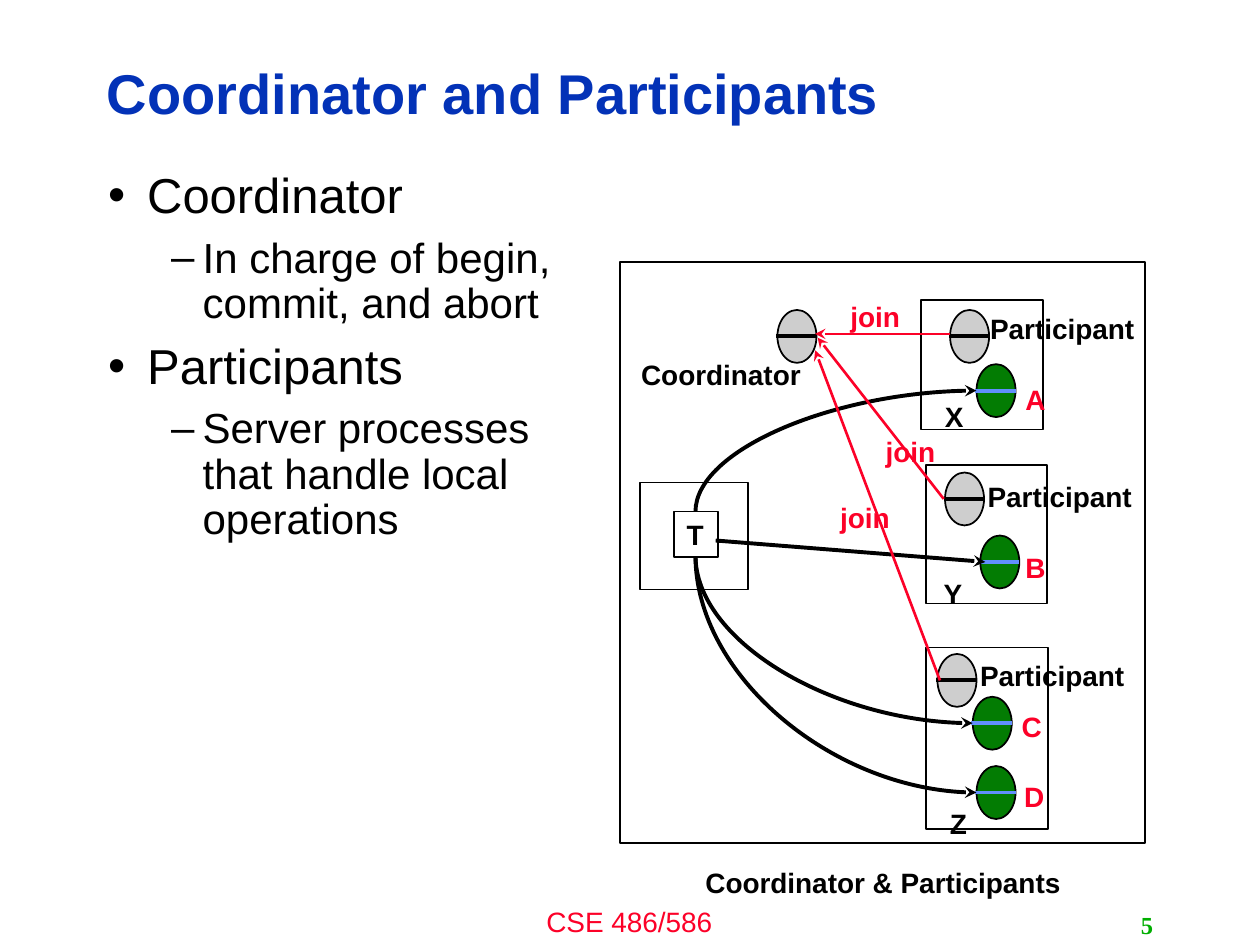
import pptx
import pptx.util
import pptx.dml.color
import pptx.enum.shapes
import pptx.enum.text
import pptx.oxml.ns
from lxml import etree

Inches = pptx.util.Inches
Pt = pptx.util.Pt
SHAPE = pptx.enum.shapes.MSO_SHAPE
CONNECTOR = pptx.enum.shapes.MSO_CONNECTOR
ALIGN = pptx.enum.text.PP_ALIGN
ANCHOR = pptx.enum.text.MSO_ANCHOR
qn = pptx.oxml.ns.qn

COLORS = {"black": "000000", "white": "FFFFFF", "title": "0332B7", "red": "FC0128",
          "number": "00AE00", "object": "037C03", "band": "618FFD", "process": "CECECE"}
NODE_WIDTH, NODE_HEIGHT = 0.31, 0.42

BULLETS = [(0, "Coordinator"), (1, "In charge of begin, commit, and abort"),
           (0, "Participants"), (1, "Server processes that handle local operations")]
LEVELS = [{"mark": "•", "size": 28, "margin": 0.31, "hang": 0.31},
          {"mark": "–", "size": 24, "margin": 0.75, "hang": 0.25}]

SITES = [
    {"box": (2.39, 0.30, 0.97, 1.03), "name": ("X", 0.09, 0.74), "process": (0.23, 0.08),
     "label": (0.45, 0.04), "objects": [("A", (0.44, 0.51), (0.73, 0.61))]},
    {"box": (2.43, 1.61, 0.96, 1.10), "name": ("Y", 0.04, 0.84), "process": (0.15, 0.06),
     "label": (0.39, 0.07), "objects": [("B", (0.43, 0.56), (0.69, 0.63))]},
    {"box": (2.43, 3.06, 0.97, 1.44), "name": ("Z", 0.09, 1.21), "process": (0.09, 0.05),
     "label": (0.33, 0.04), "objects": [("C", (0.37, 0.39), (0.66, 0.44)),
                                        ("D", (0.40, 0.94), (0.68, 1.00))]},
]
CURVES = [((0.60, 1.98), (2.83, 1.02)), ((0.60, 2.33), (2.80, 3.66)),
          ((0.60, 2.33), (2.83, 4.21))]
JOINS = [((2.62, 0.57), (1.55, 0.57), (1.73, 0.25)),
         ((2.57, 1.88), (1.57, 0.60), (2.01, 1.32)),
         ((2.54, 3.32), (1.55, 0.70), (1.65, 1.84))]


def rgb(name):
    """Return the named colour."""
    return pptx.dml.color.RGBColor.from_string(COLORS[name])


def within(box, left, top, *size):
    """Shift a place, with or without a size, by the origin of a box."""
    return (box[0] + left, box[1] + top, *size)


def format_para(para, text, size=16, color="black", bold=True, font="Arial",
                align=ALIGN.LEFT, spacing=None):
    """Write one formatted run into a paragraph."""
    para.alignment = align
    para.line_spacing = spacing
    span = para.add_run()
    span.text = text
    span.font.size = Pt(size)
    span.font.bold = bold
    span.font.name = font
    span.font.color.rgb = rgb(color)


def add_text(slide, box, text, anchor=ANCHOR.TOP, wrap=True, **style):
    """Add a text box holding one paragraph."""
    frame = slide.shapes.add_textbox(*map(Inches, box)).text_frame
    frame.word_wrap = wrap
    frame.vertical_anchor = anchor
    format_para(frame.paragraphs[0], text, **style)


def add_outline(slide, kind, box, fill=None):
    """Add a shape with a thin black outline."""
    shape = slide.shapes.add_shape(kind, *map(Inches, box))
    shape.shadow.inherit = False
    if fill:
        shape.fill.solid()
        shape.fill.fore_color.rgb = rgb(fill)
    else:
        shape.fill.background()
    shape.line.color.rgb = rgb("black")
    shape.line.width = Pt(1)
    return shape


def add_line(slide, start, end, color="black", width=2.25, arrow=False,
             kind=CONNECTOR.STRAIGHT):
    """Add a connector, with an arrowhead at its end if asked."""
    line = slide.shapes.add_connector(kind, *map(Inches, (*start, *end)))
    line.line.color.rgb = rgb(color)
    line.line.width = Pt(width)
    properties = line._element.spPr
    if arrow:
        etree.SubElement(properties.find(qn("a:ln")), qn("a:tailEnd"), type="stealth")
    etree.SubElement(properties, qn("a:effectLst"))
    return line


def add_curve(slide, start, end):
    """Add a quarter curve that leaves upright and arrives level."""
    middle_x, middle_y = (start[0] + end[0]) / 2, (start[1] + end[1]) / 2
    half_rise, half_run = (start[1] - end[1]) / 2, (end[0] - start[0]) / 2
    line = add_line(slide, (middle_x - half_rise, middle_y - half_run),
                    (middle_x + half_rise, middle_y + half_run),
                    arrow=True, kind=CONNECTOR.CURVE)
    properties = line._element.spPr
    properties.find(qn("a:xfrm")).set("rot", str(270 * 60000))
    properties.find(qn("a:prstGeom")).set("prst", "curvedConnector2")


def add_node(slide, place, fill, band):
    """Add an oval crossed by a level band."""
    left, top = place
    add_outline(slide, SHAPE.OVAL, (left, top, NODE_WIDTH, NODE_HEIGHT), fill)
    height = top + NODE_HEIGHT / 2
    add_line(slide, (left - 0.01, height), (left + NODE_WIDTH, height), band)


def add_site(slide, box, site):
    """Add a site with its participant and its objects."""
    add_outline(slide, SHAPE.RECTANGLE, box)
    for letter, place, label in site["objects"]:
        add_node(slide, within(box, *place), "object", "band")
        add_text(slide, within(box, *label, 0.32, 0.31), letter, color="red")
    name, left, top = site["name"]
    add_text(slide, within(box, left, top, 0.32, 0.31), name)
    add_node(slide, within(box, *site["process"]), "process", "black")
    add_text(slide, within(box, *site["label"], 1.43, 0.31), "Participant")


def add_diagram(slide, box):
    """Add the transaction, its coordinator and the joining sites."""
    add_outline(slide, SHAPE.RECTANGLE, box)
    add_outline(slide, SHAPE.RECTANGLE, within(box, 0.16, 1.75, 0.86, 0.85))
    for site in SITES:
        add_site(slide, within(box, *site["box"]), site)
    for start, end in CURVES:
        add_curve(slide, within(box, *start), within(box, *end))
    transaction = add_outline(slide, SHAPE.RECTANGLE,
                              within(box, 0.43, 1.98, 0.35, 0.36), "white")
    transaction.text_frame.vertical_anchor = ANCHOR.TOP
    format_para(transaction.text_frame.paragraphs[0], "T")
    add_line(slide, within(box, 0.76, 2.21), within(box, 2.90, 2.38), arrow=True)
    add_node(slide, within(box, 1.25, 0.38), "process", "black")
    for start, end, label in JOINS:
        add_line(slide, within(box, *start), within(box, *end), "red", 1.5, arrow=True)
        add_text(slide, within(box, *label, 0.68, 0.31), "join", color="red")
    add_text(slide, within(box, 0.07, 0.71, 1.53, 0.37), "Coordinator")
    add_text(slide, within(box, 0.58, 4.74, 3.18, 0.34), "Coordinator & Participants")


def add_bullets(slide, box):
    """Add the two-level bullet list."""
    frame = slide.shapes.add_textbox(*map(Inches, box)).text_frame
    frame.word_wrap = True
    for index, (depth, text) in enumerate(BULLETS):
        para = frame.add_paragraph() if index else frame.paragraphs[0]
        level = LEVELS[depth]
        para.level = depth
        format_para(para, text, size=level["size"], bold=False, spacing=0.9)
        para.space_before = Pt(0.3 * level["size"])
        properties = para._p.get_or_add_pPr()
        properties.set("marL", str(Inches(level["margin"])))
        properties.set("indent", str(-Inches(level["hang"])))
        etree.SubElement(properties, qn("a:buFont"), typeface="Arial")
        etree.SubElement(properties, qn("a:buChar"), char=level["mark"])


def add_footer(slide, box):
    """Add the course name and the slide number."""
    add_text(slide, within(box, 3.33, 0, 3.33, 0.37), "CSE 486/586", color="red",
             bold=False, align=ALIGN.CENTER)
    add_text(slide, within(box, 7.17, 0.05, 2.08, 0.32), "5", anchor=ANCHOR.MIDDLE,
             wrap=False, size=14, color="number", font="Times New Roman",
             align=ALIGN.RIGHT)


def main():
    """Build the slide and save the deck."""
    deck = pptx.Presentation()
    deck.slide_width, deck.slide_height = Inches(10), Inches(7.5)
    slide = deck.slides.add_slide(deck.slide_layouts[6])
    add_footer(slide, (0, 7.13, 10, 0.37))
    add_text(slide, (0.75, 0.36, 7.98, 0.81), "Coordinator and Participants",
             anchor=ANCHOR.MIDDLE, size=32, color="title", spacing=0.9)
    add_bullets(slide, (0.76, 1.31, 4.12, 5.39))
    add_diagram(slide, (4.92, 2.08, 4.17, 4.61))
    deck.save("out.pptx")


if __name__ == "__main__":
    main()
